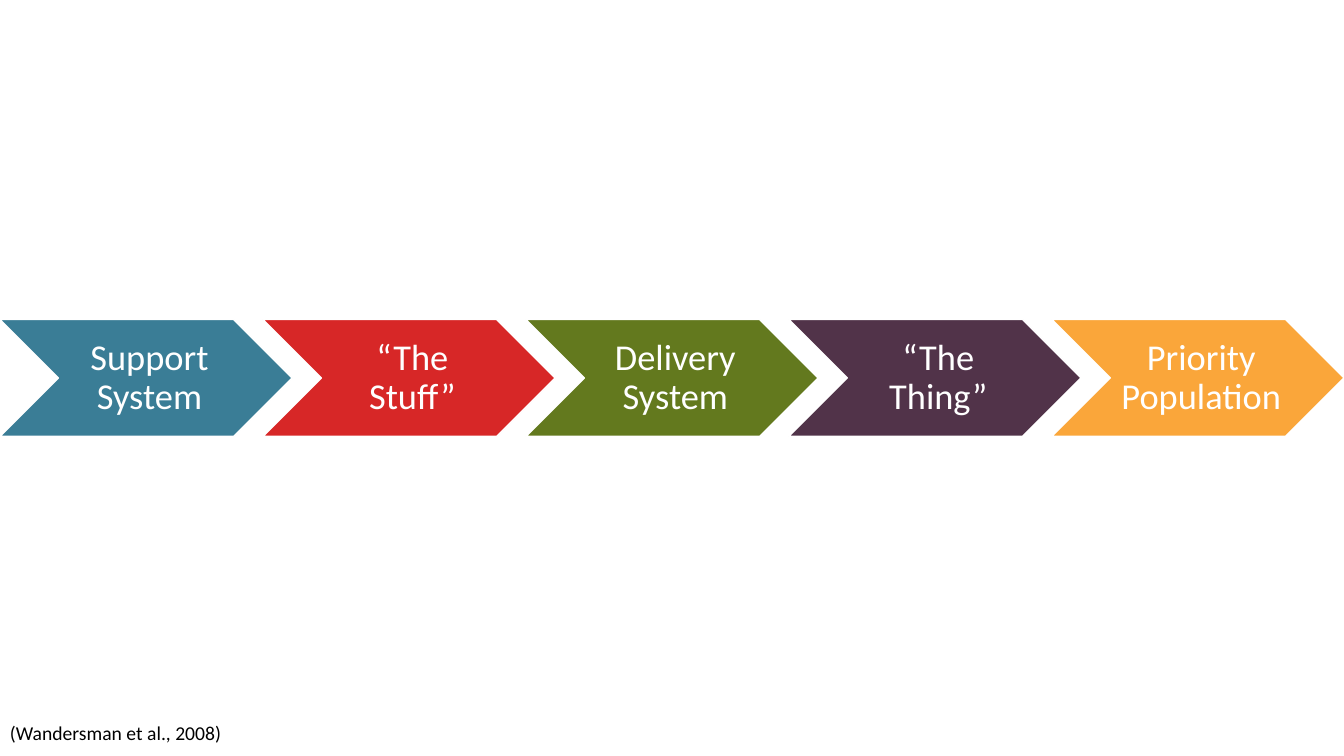
from pptx import Presentation
from pptx.dml.color import RGBColor
from pptx.enum import shapes, text
from pptx.util import Inches, Pt

COLORS = {
    "teal": "3A7D96",
    "red": "D72727",
    "green": "63791E",
    "plum": "513349",
    "orange": "FAA63A",
    "white": "FFFFFF",
    "black": "000000",
}
STAGES = [
    ("Support System", "teal"),
    ("“The Stuff”", "red"),
    ("Delivery System", "green"),
    ("“The Thing”", "plum"),
    ("Priority Population", "orange"),
]
FONT = "Calibri"
OVERLAP = 0.1  # share of a chevron's width covered by the next one


def rgb(name):
    return RGBColor.from_string(COLORS[name])


def format_run(paragraph, size, color):
    font = paragraph.runs[0].font
    font.name, font.size = FONT, Pt(size)
    font.color.rgb = rgb(color)


def add_stage(slide, label, color, left, top, width, height):
    chevron = slide.shapes.add_shape(
        shapes.MSO_SHAPE.CHEVRON,
        Inches(left), Inches(top), Inches(width), Inches(height))
    chevron.shadow.inherit = False
    chevron.fill.solid()
    chevron.fill.fore_color.rgb = rgb(color)
    chevron.line.color.rgb = rgb("white")
    chevron.line.width = Pt(1)

    frame = chevron.text_frame
    frame.word_wrap = True
    frame.vertical_anchor = text.MSO_ANCHOR.MIDDLE
    frame.margin_left, frame.margin_right = Inches(0.1), Inches(0.03)
    frame.margin_top = frame.margin_bottom = Inches(0.04)
    paragraph = frame.paragraphs[0]
    paragraph.text = label
    paragraph.alignment = text.PP_ALIGN.CENTER
    paragraph.line_spacing = 0.9
    format_run(paragraph, 26, "white")


def add_process(slide, left, top, width, height):
    """Spread the stages as overlapping chevrons across the box."""
    stage_width = width / (len(STAGES) - OVERLAP * (len(STAGES) - 1))
    step = stage_width * (1 - OVERLAP)
    for index, (label, color) in enumerate(STAGES):
        add_stage(slide, label, color, left + index * step, top, stage_width, height)


def add_citation(slide, left, top, width, height):
    citation = slide.shapes.add_textbox(
        Inches(left), Inches(top), Inches(width), Inches(height))
    citation.text_frame.word_wrap = True
    citation.text_frame.text = "(Wandersman et al., 2008)"
    format_run(citation.text_frame.paragraphs[0], 14, "black")


def main():
    deck = Presentation()
    deck.slide_width, deck.slide_height = Inches(13.33), Inches(7.5)
    slide = deck.slides.add_slide(deck.slide_layouts[6])
    add_process(slide, 0, 3.17, 13.33, 1.16)
    add_citation(slide, 0, 7.1, 5.2, 0.34)
    deck.save("out.pptx")


if __name__ == "__main__":
    main()
